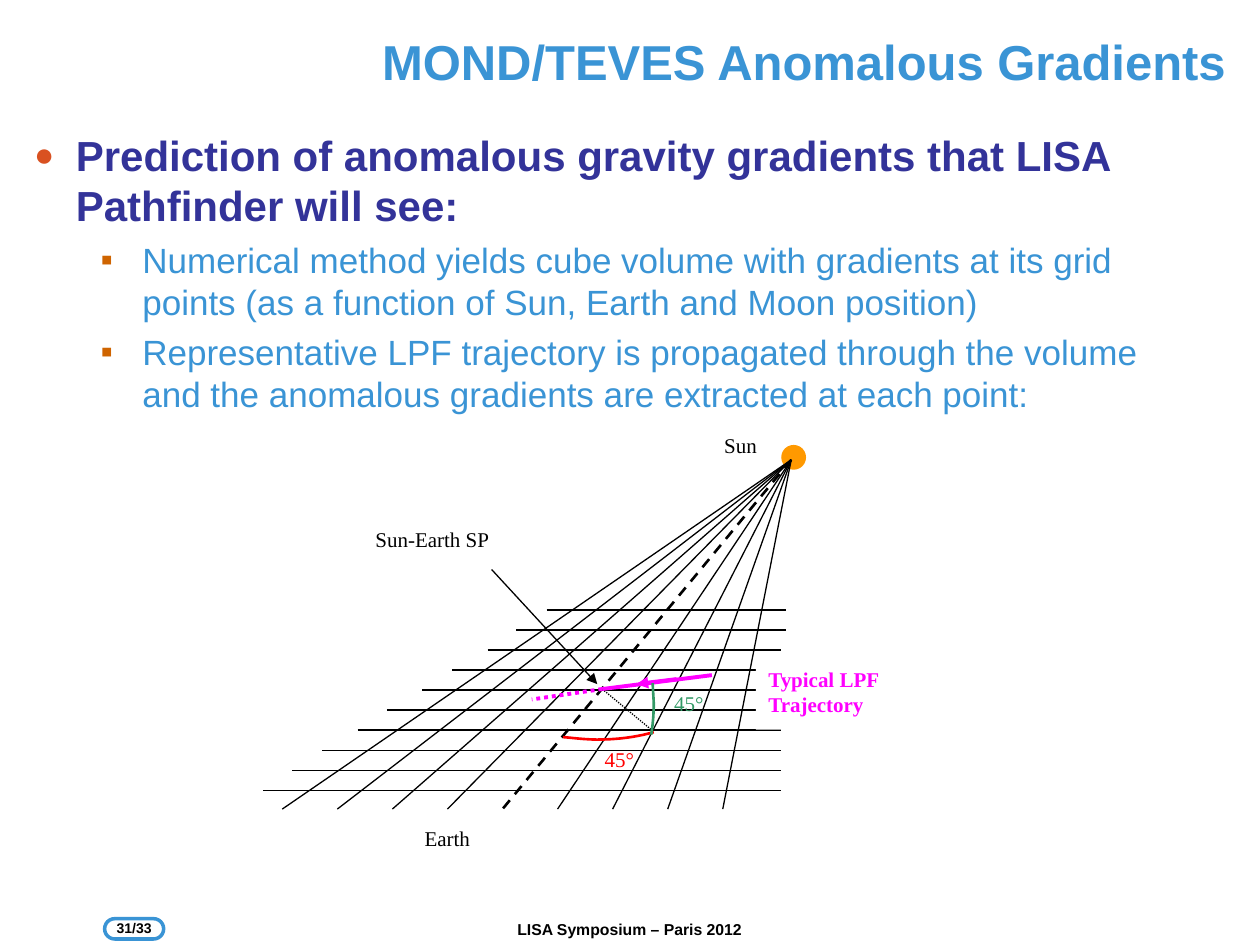
from lxml.etree import SubElement
from pptx import Presentation
from pptx.dml.color import RGBColor
from pptx.enum.dml import MSO_LINE as Dash
from pptx.enum.shapes import MSO_CONNECTOR, MSO_SHAPE
from pptx.enum.text import MSO_ANCHOR as Anchor, PP_ALIGN as Align
from pptx.oxml.ns import qn
from pptx.util import Cm, Pt

COLORS = {
    "blue": "3A94D5", "navy": "333399", "red_bullet": "D95121", "brown": "CF6400",
    "black": "000000", "white": "FFFFFF", "sun": "FF9900", "red": "FF0000",
    "magenta": "FF00FF", "green": "339966",
}
SANS, SERIF = "Arial", "Times New Roman"

HEADLINE = "MOND/TEVES Anomalous Gradients"
FOOTER = "LISA Symposium – Paris 2012"
PAGE_NUMBER = "31/33"
TOP_LEVEL = dict(margin=0.84, bullet="●", bullet_color="red_bullet", bullet_size=80,
                 size=24, color="navy", bold=True)
SUB_LEVEL = dict(margin=2.18, bullet="▪", bullet_color="brown", bullet_size=100,
                 size=20, color="blue", bold=False)
BULLETS = [
    (TOP_LEVEL, "Prediction of anomalous gravity gradients that LISA Pathfinder will see:"),
    (SUB_LEVEL, "Numerical method yields cube volume with gradients at its grid points "
                "(as a function of Sun, Earth and Moon position)"),
    (SUB_LEVEL, "Representative LPF trajectory is propagated through the volume and the "
                "anomalous gradients are extracted at each point:"),
]

RAY_ORIGIN = (15.95, 9.27)
RAY_COUNT, RAY_LEFT, RAY_STEP, RAY_BOTTOM = 9, 5.69, 1.11, 16.31
EARTH_RAY = 4
GRID_BOTTOM, GRID_STEP = 15.93, 0.404
GRID_LEFTS = [5.31, 5.89, 6.5, 7.21, 7.8, 8.51, 9.12, 9.83, 10.41, 11.02]
GRID_RIGHTS = [15.75] * 8 + [15.85] * 2

SADDLE = (12.14, 13.89)
PATHS = [
    dict(start=SADDLE, end=(13.13, 14.71), dash=Dash.ROUND_DOT),
    dict(start=(14.35, 13.61), end=SADDLE, color="magenta", width=2.25),
    dict(start=SADDLE, end=(10.72, 14.1), color="magenta", width=2.25, dash=Dash.ROUND_DOT),
    dict(start=(13.64, 13.69), end=(12.83, 13.79), color="magenta", width=2.25, arrow=True),
]
POINTER = dict(start=(9.91, 11.48), end=(12.04, 13.79), arrow=True)
ARCS = [
    ("red", [(13.18, 14.76), (12.83, 14.86), (12.45, 14.91), (12.04, 14.91),
             (11.81, 14.91), (11.58, 14.88), (11.35, 14.86)]),
    ("green", [(13.16, 13.77), (13.16, 13.92), (13.18, 14.07), (13.18, 14.2),
               (13.18, 14.4), (13.16, 14.61), (13.13, 14.81)]),
]
LABELS = [
    ("45°", (11.94, 14.91, 1.19, 0.71), "red", False, None),
    ("45°", (13.34, 13.79, 1.12, 0.71), "green", False, None),
    ("Earth", (8.31, 16.51, 1.5, 0.71), "black", False, None),
    ("Sun", (14.35, 8.59, 1.22, 0.71), "black", False, "white"),
    ("Typical LPF Trajectory", (15.24, 13.31, 3.43, 1.4), "magenta", True, "white"),
    ("Sun-Earth SP", (7.32, 10.49, 3.23, 0.71), "black", False, None),
]


def rgb(name):
    return RGBColor.from_string(COLORS[name])


def add_run(paragraph, text, size, color, bold, font=SANS):
    run = paragraph.add_run()
    run.text = text
    run.font.name, run.font.size, run.font.bold = font, Pt(size), bold
    run.font.color.rgb = rgb(color)


def add_text_frame(slide, box, insets=(0, 0), anchor=Anchor.TOP, fill=None):
    shape = slide.shapes.add_textbox(*map(Cm, box))
    if fill:
        shape.fill.solid()
        shape.fill.fore_color.rgb = rgb(fill)
    frame = shape.text_frame
    frame.word_wrap, frame.vertical_anchor = True, anchor
    frame.margin_left = frame.margin_right = Cm(insets[0])
    frame.margin_top = frame.margin_bottom = Cm(insets[1])
    return frame


def add_line_of_text(slide, text, box, size, color, align, anchor=Anchor.TOP):
    paragraph = add_text_frame(slide, box, anchor=anchor).paragraphs[0]
    paragraph.alignment = align
    add_run(paragraph, text, size, color, True)


def add_bullet(paragraph, level):
    properties = paragraph._p.get_or_add_pPr()
    properties.set("marL", str(Cm(level["margin"])))
    properties.set("indent", str(-Cm(0.84)))
    color = SubElement(properties, qn("a:buClr"))
    SubElement(color, qn("a:srgbClr"), val=COLORS[level["bullet_color"]])
    SubElement(properties, qn("a:buSzPct"), val=str(level["bullet_size"] * 1000))
    SubElement(properties, qn("a:buFont"), typeface=SANS)
    SubElement(properties, qn("a:buChar"), char=level["bullet"])


def add_line(slide, start, end, color="black", width=0.75, dash=None, arrow=False):
    line = slide.shapes.add_connector(MSO_CONNECTOR.STRAIGHT, *map(Cm, (*start, *end)))
    line.line.color.rgb, line.line.width = rgb(color), Pt(width)
    if dash:
        line.line.dash_style = dash
    if arrow:
        SubElement(line.line._get_or_add_ln(), qn("a:tailEnd"), type="triangle")
    SubElement(line._element.spPr, qn("a:effectLst"))


def curve_points(controls, steps=10):
    points = [controls[0]]
    for first in range(0, len(controls) - 1, 3):
        segment = controls[first:first + 4]
        for step in range(1, steps + 1):
            t = step / steps
            weights = ((1 - t) ** 3, 3 * t * (1 - t) ** 2, 3 * t * t * (1 - t), t ** 3)
            points.append(tuple(sum(w * point[axis] for w, point in zip(weights, segment))
                                for axis in (0, 1)))
    return [(Cm(x), Cm(y)) for x, y in points]


def add_arc(slide, color, controls):
    start, *rest = curve_points(controls)
    builder = slide.shapes.build_freeform(*start)
    builder.add_line_segments(rest, close=False)
    arc = builder.convert_to_shape()
    arc.shadow.inherit = False
    arc.fill.background()
    arc.line.color.rgb, arc.line.width = rgb(color), Pt(1.5)


def add_page_furniture(slide):
    badge = slide.shapes.add_shape(MSO_SHAPE.ROUNDED_RECTANGLE,
                                   *map(Cm, (2.11, 18.52, 1.19, 0.41)))
    badge.adjustments[0] = 0.5
    badge.shadow.inherit = False
    badge.fill.background()
    badge.line.color.rgb, badge.line.width = rgb("blue"), Pt(2)
    add_line_of_text(slide, FOOTER, (5.59, 18.54, 14.2, 0.51), 9, "black", Align.CENTER)
    add_line_of_text(slide, PAGE_NUMBER, (2.11, 18.54, 1.19, 0.51), 8, "black", Align.CENTER)
    add_line_of_text(slide, HEADLINE, (1.8, 0.33, 22.91, 1.8), 28, "blue", Align.RIGHT,
                     Anchor.MIDDLE)


def add_bullets(slide):
    frame = add_text_frame(slide, (0.69, 2.61, 22.91, 6))
    for index, (level, text) in enumerate(BULLETS):
        paragraph = frame.add_paragraph() if index else frame.paragraphs[0]
        add_bullet(paragraph, level)
        if index:
            paragraph.space_before = Pt(4.6)
        add_run(paragraph, text, level["size"], level["color"], level["bold"])


def add_diagram(slide):
    sun = slide.shapes.add_shape(MSO_SHAPE.OVAL, *map(Cm, (15.75, 8.97, 0.5, 0.5)))
    sun.shadow.inherit = False
    sun.fill.solid()
    sun.fill.fore_color.rgb = rgb("sun")
    sun.line.fill.background()
    for index in range(RAY_COUNT):
        style = dict(width=1.5, dash=Dash.DASH) if index == EARTH_RAY else {}
        add_line(slide, RAY_ORIGIN, (RAY_LEFT + index * RAY_STEP, RAY_BOTTOM), **style)
    for row, (left, right) in enumerate(zip(GRID_LEFTS, GRID_RIGHTS)):
        y = GRID_BOTTOM - row * GRID_STEP
        add_line(slide, (left, y), (right, y))
    for path in PATHS:
        add_line(slide, **path)
    for color, controls in ARCS:
        add_arc(slide, color, controls)
    for text, box, color, bold, fill in LABELS:
        frame = add_text_frame(slide, box, (0.25, 0.13), fill=fill)
        add_run(frame.paragraphs[0], text, 12, color, bold, SERIF)
    add_line(slide, **POINTER)


def main():
    presentation = Presentation()
    presentation.slide_width, presentation.slide_height = Cm(25.4), Cm(19.05)
    slide = presentation.slides.add_slide(presentation.slide_layouts[6])
    add_page_furniture(slide)
    add_bullets(slide)
    add_diagram(slide)
    presentation.save("out.pptx")


if __name__ == "__main__":
    main()
